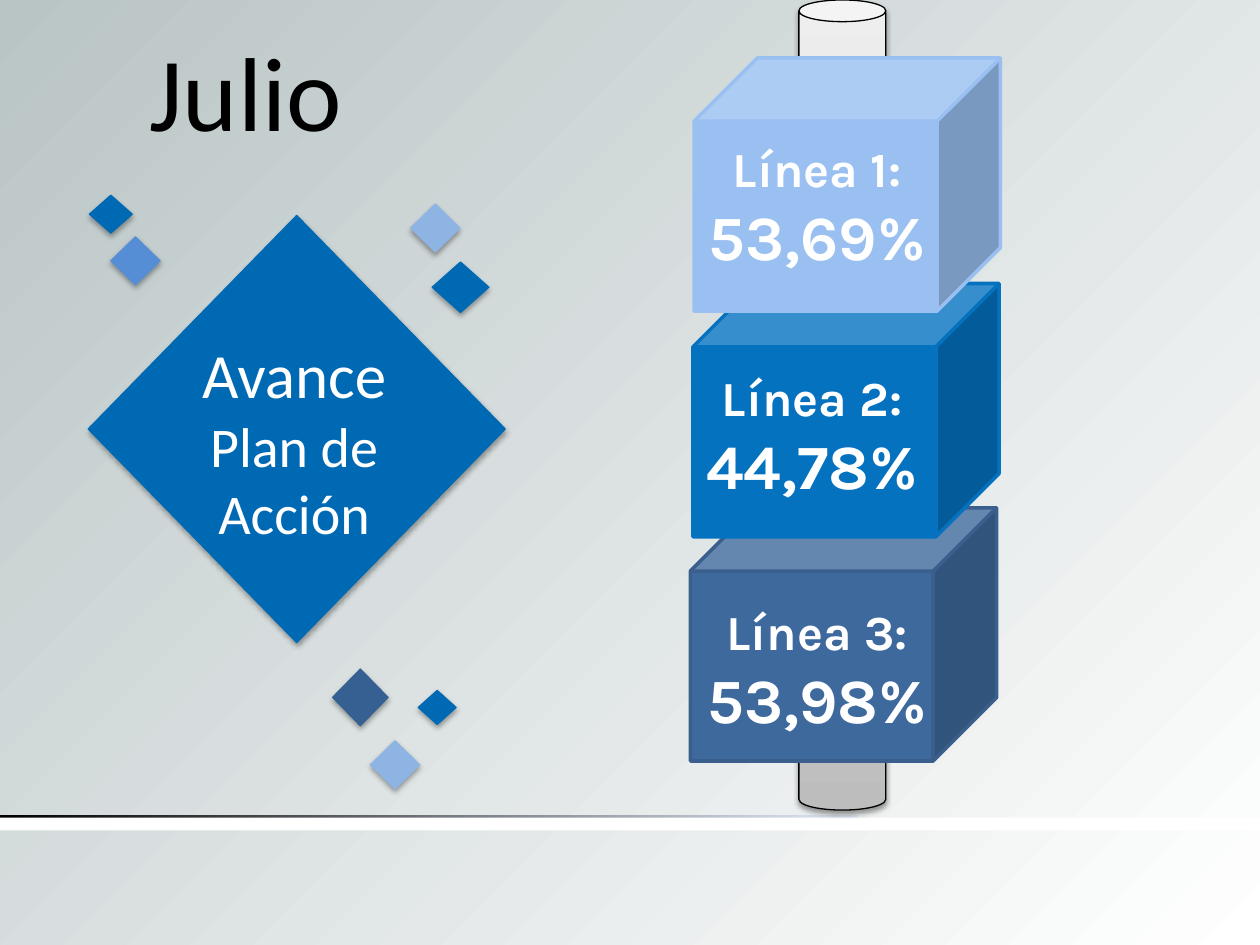
from lxml import etree
from pptx import Presentation
from pptx import util as u
from pptx.dml.color import RGBColor
from pptx.enum import shapes, text
from pptx.oxml.ns import qn

SCALE = 9144
WHITE, BLACK, BLUE, SKY = "FFFFFF", "000000", "0069B4", "8EB4E3"


def px(value):
    return u.Emu(value * SCALE)


def color(value):
    return RGBColor.from_string(value)


def add_child(parent, tag, **attributes):
    child = etree.SubElement(parent, qn(tag))
    for name, value in attributes.items():
        child.set(name, str(value))
    return child


def set_gradient(fill, owner, stops, angle=None):
    fill.gradient()
    gradient = next(owner.iter(qn("a:gradFill")))
    for child in list(gradient):
        gradient.remove(child)
    stop_list = add_child(gradient, "a:gsLst")
    for position, value in stops:
        stop = add_child(stop_list, "a:gs", pos=position * 1000)
        add_child(stop, "a:srgbClr", val=value)
    if angle is None:
        path = add_child(gradient, "a:path", path="circle")
        add_child(path, "a:fillToRect", l=100000, t=100000)
    else:
        add_child(gradient, "a:lin", ang=angle * 60000, scaled=0)


def add_shadow(shape, opacity, distance):
    effects = shape._element.spPr.find(qn("a:effectLst"))
    shadow = add_child(effects, "a:outerShdw", blurRad=u.Pt(3.1), dist=u.Pt(distance),
                       dir=90 * 60000, rotWithShape=0)
    shadow_color = add_child(shadow, "a:srgbClr", val=BLACK)
    add_child(shadow_color, "a:alpha", val=opacity * 1000)


def add_shape(slide, kind, box, fill=None, line=None, width=0.75):
    shape = slide.shapes.add_shape(kind, *map(px, box))
    shape.shadow.inherit = False
    if fill:
        shape.fill.solid()
        shape.fill.fore_color.rgb = color(fill)
    if line:
        shape.line.color.rgb = color(line)
        shape.line.width = u.Pt(width)
    else:
        shape.line.fill.background()
    return shape


def add_text(slide, box, lines, font="Calibri", ink=WHITE, bold=False, wrap=True,
             anchor=text.MSO_ANCHOR.MIDDLE):
    frame = slide.shapes.add_textbox(*map(px, box)).text_frame
    frame.word_wrap = wrap
    frame.auto_size = text.MSO_AUTO_SIZE.SHAPE_TO_FIT_TEXT
    frame.vertical_anchor = anchor
    for index, (words, size) in enumerate(lines):
        paragraph = frame.add_paragraph() if index else frame.paragraphs[0]
        paragraph.alignment = text.PP_ALIGN.CENTER
        run = paragraph.add_run()
        run.text = words
        run.font.name = font
        run.font.size = u.Pt(size)
        run.font.bold = bold
        run.font.color.rgb = color(ink)


def add_diamond(slide, box, fill):
    diamond = add_shape(slide, shapes.MSO_SHAPE.DIAMOND, box, fill, fill)
    add_shadow(diamond, 35, 1.8)


def draw_backdrop(slide, width, top):
    set_gradient(slide.background.fill, slide._element, [(0, WHITE), (100, "B9C4C5")])
    rule = add_shape(slide, shapes.MSO_SHAPE.RECTANGLE, (0, top, 681, 5))
    set_gradient(rule.fill, rule._element, [(0, BLACK), (100, "E1E8F5")], 0)
    add_shape(slide, shapes.MSO_SHAPE.RECTANGLE, (0, top + 2, width, 10), WHITE)


def draw_progress_title(slide, left, top):
    add_diamond(slide, (left, top + 155, 331, 339), BLUE)
    accents = [
        (224, 416, 39, 38, SKY),
        (18, 16, 39, 38, "558ED5"),
        (273, 36, 45, 40, BLUE),
        (1, -17, 34, 30, BLUE),
        (194, 359, 44, 45, "376092"),
        (262, 376, 30, 27, BLUE),
        (256, -10, 39, 38, SKY),
    ]
    for x, y, width, height, fill in accents:
        add_diamond(slide, (left + x, top + 156 + y, width, height), fill)
    add_text(slide, (left + 38, top + 245, 251, 178),
             [("Avance", 36), ("Plan de Acción", 32)])
    add_text(slide, (left + 38, top, 174, 111), [("Julio", 60)], ink=BLACK, wrap=False,
             anchor=text.MSO_ANCHOR.TOP)


def draw_cube(slide, left, top, label, value, fill, line, text_box):
    add_shape(slide, shapes.MSO_SHAPE.CUBE, (left, top, 243, 201), fill, line, 2)
    x, y, width = text_box
    add_text(slide, (left + x, top + y, width, 118), [(label, 28), (value, 36)],
             font="Karla", bold=True)


def draw_tower(slide, left, top):
    post = add_shape(slide, shapes.MSO_SHAPE.CAN, (left + 86, top, 69, 643), line=BLACK)
    set_gradient(post.fill, post._element,
                 [(0, "BDBDBD"), (35, "D1D1D1"), (100, "EEEEEE")], 270)
    add_shadow(post, 38, 1.6)
    cubes = [
        (0, 403, "Línea 3:", "53,98%", "3E699D", "3A5F8C", (1, 69, 199)),
        (2, 225, "Línea 2:", "44,78%", "0572C0", "0572C0", (-31, 61, 251)),
        (3, 46, "Línea 1:", "53,69%", "99C0F1", "99C0F1", (-28, 58, 251)),
    ]
    for x, y, *details in cubes:
        draw_cube(slide, left + x, top + y, *details)


def main():
    presentation = Presentation()
    presentation.slide_width, presentation.slide_height = px(1000), px(750)
    slide = presentation.slides.add_slide(presentation.slide_layouts[6])
    draw_backdrop(slide, 1000, 647)
    draw_progress_title(slide, 70, 16)
    draw_tower(slide, 548, 0)
    presentation.save("out.pptx")


if __name__ == "__main__":
    main()
